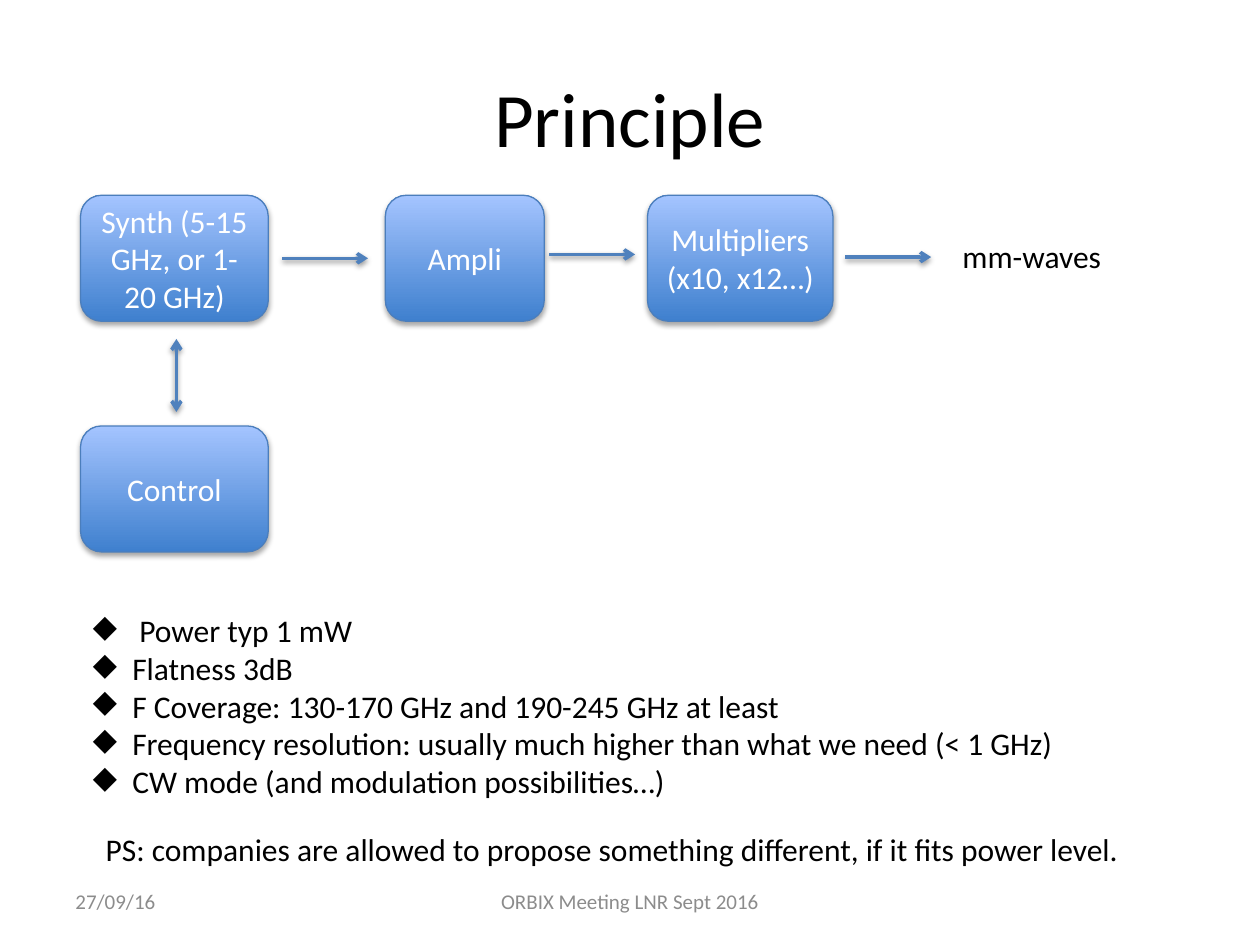
from lxml.etree import SubElement
from pptx import Presentation
from pptx.dml.color import RGBColor
from pptx.enum.shapes import MSO_CONNECTOR as Connector, MSO_SHAPE as Preset
from pptx.enum.text import MSO_ANCHOR as Anchor, MSO_AUTO_SIZE as AutoSize, PP_ALIGN as Align
from pptx.oxml.ns import qn
from pptx.util import Pt

FONT = "Calibri"
COLORS = {
    "black": "000000",
    "white": "FFFFFF",
    "grey": "8C8C8C",
    "block_bottom": "3F80CE",
    "block_top": "A4C4FF",
    "outline": "4B7EBC",
    "arrow": "4F81BD",
}
BULLETS = [
    " Power typ 1 mW",
    "Flatness 3dB",
    "F Coverage: 130-170 GHz and 190-245 GHz at least",
    "Frequency resolution: usually much higher than what we need (< 1 GHz)",
    "CW mode (and modulation possibilities…)",
]
BLOCK_HEIGHT = 72
CHAIN_TOP = 111.6
CONTROL_TOP = 243.4
ARROW_LENGTH = 49


def color(name):
    return RGBColor.from_string(COLORS[name])


def add_bullet(para):
    properties = para._p.get_or_add_pPr()
    properties.set("marL", str(Pt(22.5)))
    properties.set("indent", str(-Pt(22.5)))
    SubElement(properties, qn("a:buChar"), char="◆")


def write(box, lines, size=18, ink="black", align=Align.LEFT,
          anchor=Anchor.TOP, wrap=True, grow=False, bullet=False):
    frame = box.text_frame
    frame.word_wrap = wrap
    frame.vertical_anchor = anchor
    frame.auto_size = AutoSize.SHAPE_TO_FIT_TEXT if grow else AutoSize.NONE
    for index, line in enumerate(lines):
        para = frame.add_paragraph() if index else frame.paragraphs[0]
        para.alignment = align
        if bullet:
            add_bullet(para)
        span = para.add_run()
        span.text = line
        span.font.name = FONT
        span.font.size = Pt(size)
        span.font.color.rgb = color(ink)


def add_text(page, left, top, width, height, *lines, **style):
    box = page.shapes.add_textbox(Pt(left), Pt(top), Pt(width), Pt(height))
    write(box, lines, **style)


def add_shadow(effects, distance, opacity):
    shadow = SubElement(effects, qn("a:outerShdw"), blurRad=str(Pt(3.1)),
                        dist=str(Pt(distance)), dir="5400000", rotWithShape="0")
    tint = SubElement(shadow, qn("a:srgbClr"), val=COLORS["black"])
    SubElement(tint, qn("a:alpha"), val=str(opacity * 1000))


def add_block(page, left, top, width, *lines):
    block = page.shapes.add_shape(Preset.ROUNDED_RECTANGLE, Pt(left), Pt(top),
                                  Pt(width), Pt(BLOCK_HEIGHT))
    block.fill.gradient()
    block.fill.gradient_angle = 90
    for stop, name in zip(block.fill.gradient_stops, ("block_bottom", "block_top")):
        stop.color.rgb = color(name)
    block.line.color.rgb = color("outline")
    block.line.width = Pt(0.75)
    block.shadow.inherit = False
    add_shadow(block._element.spPr.find(qn("a:effectLst")), 1.8, 35)
    write(block, lines, ink="white", align=Align.CENTER, anchor=Anchor.MIDDLE)


def add_arrow(page, x1, y1, x2, y2, both_ends=False):
    arrow = page.shapes.add_connector(Connector.STRAIGHT, Pt(x1), Pt(y1), Pt(x2), Pt(y2))
    arrow.line.color.rgb = color("arrow")
    arrow.line.width = Pt(2)
    outline = arrow.line._get_or_add_ln()
    for end in ("a:headEnd", "a:tailEnd") if both_ends else ("a:tailEnd",):
        SubElement(outline, qn(end), type="arrow")
    add_shadow(SubElement(arrow._element.spPr, qn("a:effectLst")), 1.6, 38)


def main():
    deck = Presentation()
    deck.slide_width, deck.slide_height = Pt(720), Pt(540)
    page = deck.slides.add_slide(deck.slide_layouts[6])

    add_text(page, 36, 21.6, 648, 90, "Principle", size=44,
             align=Align.CENTER, anchor=Anchor.MIDDLE)
    footer = {"size": 12, "ink": "grey", "anchor": Anchor.MIDDLE}
    add_text(page, 36, 500.4, 168, 28.8, "27/09/16", **footer)
    add_text(page, 246, 500.4, 228, 28.8, "ORBIX Meeting LNR Sept 2016",
             align=Align.CENTER, **footer)
    add_text(page, 53.3, 470.9, 620, 28.8,
             "PS: companies are allowed to propose something different, if it fits power level.",
             grow=True)

    add_block(page, 46, CHAIN_TOP, 107.3, "Synth (5-15 GHz, or 1-20 GHz)")
    add_block(page, 220.2, CHAIN_TOP, 90.8, "Ampli")
    add_block(page, 370, CHAIN_TOP, 106, "Multipliers", "(x10, x12…)")
    add_block(page, 46, CONTROL_TOP, 107.3, "Control")

    add_arrow(page, 100.8, 193.7, 100.8, 235.4, both_ends=True)
    for left, middle in ((161.3, 147.6), (313.9, 145.4), (483.1, 146.9)):
        add_arrow(page, left, middle, left + ARROW_LENGTH, middle)

    add_text(page, 542.9, 131.8, 95, 28.8, "mm-waves", wrap=False, grow=True)
    add_text(page, 46, 345.6, 568, 116.6, *BULLETS, wrap=False, grow=True, bullet=True)
    deck.save("out.pptx")


if __name__ == "__main__":
    main()
